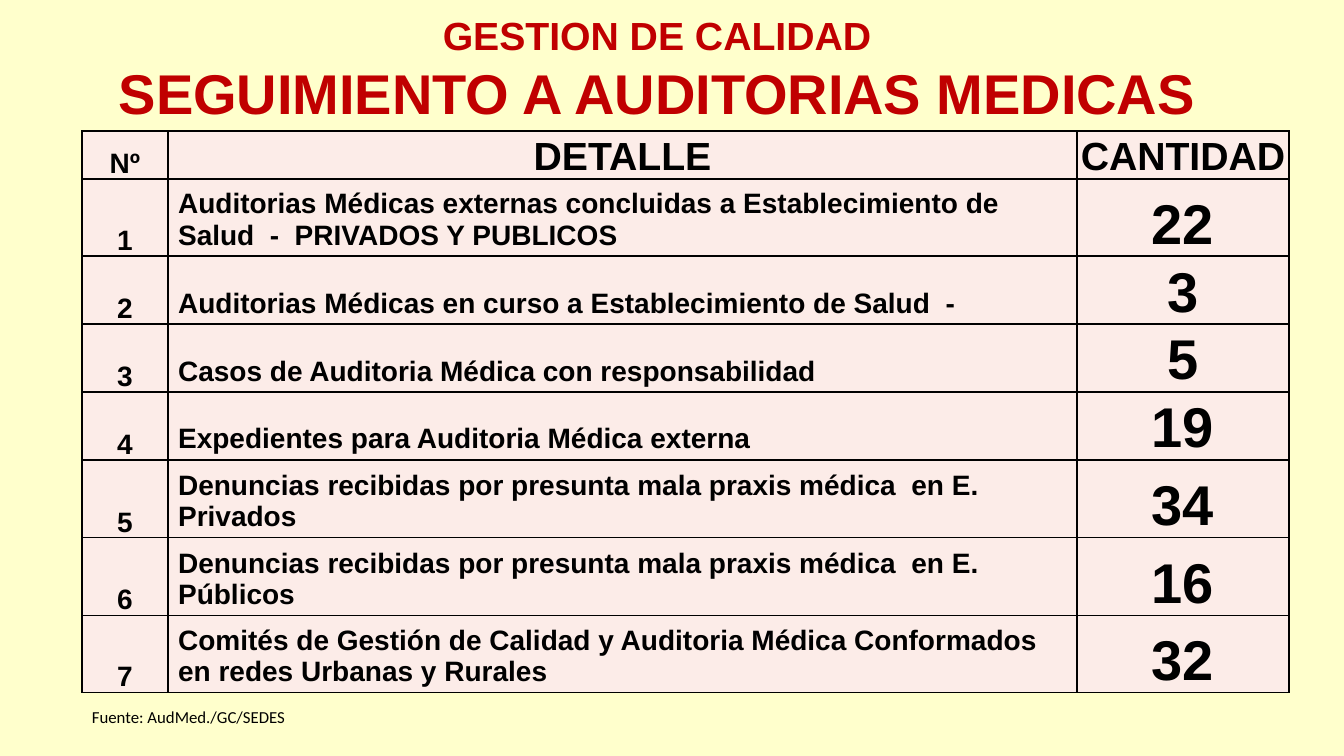
import pptx
import pptx.util
import pptx.dml.color
import pptx.enum.text
import pptx.oxml
import pptx.oxml.ns

PX = 12192000 / 1344
COLORS = {"background": "FFFFCC", "heading": "C00000", "cell": "FCECE8", "ink": "000000"}
ANCHOR = pptx.enum.text.MSO_ANCHOR
ALIGN = pptx.enum.text.PP_ALIGN


def px(length):
    return pptx.util.Emu(round(length * PX))


def write(paragraph, text, size, color="ink", font="Arial", bold=True, align=ALIGN.CENTER):
    paragraph.alignment = align
    paragraph.line_spacing = 1.0
    paragraph.space_before = pptx.util.Pt(0)
    run = paragraph.add_run()
    run.text = text
    run.font.size = pptx.util.Pt(size)
    run.font.name = font
    run.font.bold = bold
    run.font.color.rgb = pptx.dml.color.RGBColor.from_string(COLORS[color])


presentation = pptx.Presentation()
presentation.slide_width = px(1344)
presentation.slide_height = px(756)
slide = presentation.slides.add_slide(presentation.slide_layouts[5])
slide.background.fill.solid()
slide.background.fill.fore_color.rgb = pptx.dml.color.RGBColor.from_string(COLORS["background"])

heading = slide.shapes.title
heading.left, heading.top, heading.width, heading.height = px(87), px(6), px(1140), px(126)
heading_frame = heading.text_frame
heading_frame.auto_size = pptx.enum.text.MSO_AUTO_SIZE.NONE
heading_frame.word_wrap = False
heading_frame.vertical_anchor = ANCHOR.TOP
write(heading_frame.paragraphs[0], "GESTION DE CALIDAD", 28, color="heading")
write(heading_frame.add_paragraph(), "SEGUIMIENTO A AUDITORIAS MEDICAS", 40, color="heading")

audits = [
    ("Nº", "DETALLE", "CANTIDAD"),
    ("1", "Auditorias Médicas externas concluidas a Establecimiento de Salud  -  PRIVADOS Y PUBLICOS", "22"),
    ("2", "Auditorias Médicas en curso a Establecimiento de Salud  -", "3"),
    ("3", "Casos de Auditoria Médica con responsabilidad", "5"),
    ("4", "Expedientes para Auditoria Médica externa", "19"),
    ("5", "Denuncias recibidas por presunta mala praxis médica  en E. Privados", "34"),
    ("6", "Denuncias recibidas por presunta mala praxis médica  en E. Públicos", "16"),
    ("7", "Comités de Gestión de Calidad y Auditoria Médica Conformados en redes Urbanas y Rurales", "32"),
]
column_widths = [86, 909, 212]
row_heights = [48, 77, 68, 68, 68, 78, 78, 77]
header_sizes = [20, 28, 28]
audit_sizes = [20, 20, 40]

audit_table = slide.shapes.add_table(
    len(audits), len(column_widths), px(82), px(131), px(sum(column_widths)), px(sum(row_heights))
).table
for column, width in zip(audit_table.columns, column_widths):
    column.width = px(width)
for row, height in zip(audit_table.rows, row_heights):
    row.height = px(height)

for row_index, audit in enumerate(audits):
    sizes = audit_sizes if row_index else header_sizes
    for column_index, text in enumerate(audit):
        is_detail = row_index > 0 and column_index == 1
        cell = audit_table.cell(row_index, column_index)
        cell.vertical_anchor = ANCHOR.BOTTOM
        if not is_detail:
            cell.margin_left = cell.margin_right = cell.margin_top = px(1)
            cell.margin_bottom = 0
        write(cell.text_frame.paragraphs[0], text, sizes[column_index],
              align=ALIGN.LEFT if is_detail else ALIGN.CENTER)
        properties = cell._tc.get_or_add_tcPr()
        for side in ("lnL", "lnR", "lnT", "lnB"):
            properties.append(pptx.oxml.parse_xml(
                f'<a:{side} {pptx.oxml.ns.nsdecls("a")} w="12700"><a:solidFill>'
                f'<a:srgbClr val="{COLORS["ink"]}"/></a:solidFill></a:{side}>'))
        cell.fill.solid()
        cell.fill.fore_color.rgb = pptx.dml.color.RGBColor.from_string(COLORS["cell"])

source_note = slide.shapes.add_textbox(px(82), px(702), px(216), px(30))
source_note.text_frame.word_wrap = False
write(source_note.text_frame.paragraphs[0], "Fuente: AudMed./GC/SEDES", 12,
      font="Calibri", bold=False, align=ALIGN.LEFT)

presentation.save("out.pptx")
